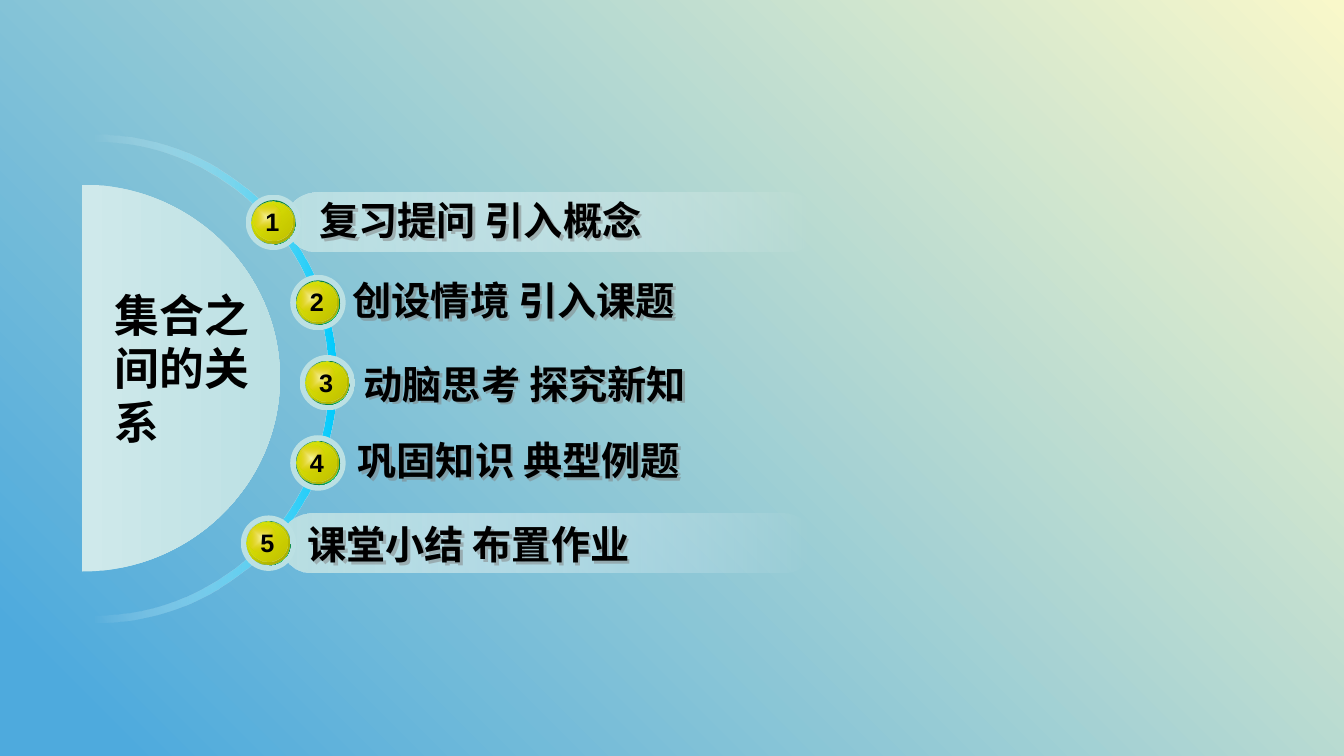
from dataclasses import dataclass

from lxml import etree
from pptx import Presentation
from pptx.dml.color import RGBColor
from pptx.enum.shapes import MSO_SHAPE
from pptx.enum.text import MSO_ANCHOR, PP_ALIGN
from pptx.oxml import parse_xml
from pptx.oxml.ns import nsdecls, qn
from pptx.util import Pt

OVAL, ROUND = MSO_SHAPE.OVAL, MSO_SHAPE.ROUNDED_RECTANGLE
LEFT, MID, RIGHT = PP_ALIGN.LEFT, PP_ALIGN.CENTER, PP_ALIGN.RIGHT
TOP = MSO_ANCHOR.TOP


@dataclass(frozen=True)
class Theme:
    font: str = "Arial"
    ink: str = "000000"
    shade: str = "808080"
    pale: str = "BBE0E3"
    mist: str = "CFE9EB"
    white: str = "FFFFFF"
    ring: str = "00CCFF"
    sky: tuple = ("4EAADD", "F9F8CA")
    rim: tuple = ("10E470", "098340")
    body: tuple = ("FFFF00", "A2A200")
    shine: tuple = ("FFFFFF", "E9940B")
    gloss: tuple = ("FFFF00", "C2C200")
    title: int = 32
    label: int = 28
    num: int = 18


T = Theme()

# Left of the ball, left and top of the label; the flag adds a bar behind it
STEPS = [
    ("复习提问 引入概念", 175.5, 221, 136.8, True),
    ("创设情境 引入课题", 207.3, 244.8, 193.7, False),
    ("动脑思考 探究新知", 214, 252.7, 253.6, False),
    ("巩固知识 典型例题", 207.3, 248.4, 308.2, False),
    ("课堂小结 布置作业", 172, 212.4, 368.4, True),
]
FIRST, PITCH, BALL = 139, 57.3, 39.6
BEND = 0.55  # handle length of a quarter ellipse


def blend(fill, pair, angle=0):
    fill.gradient()
    fill.gradient_angle = angle
    for stop, tone in zip(fill.gradient_stops, pair):
        stop.color.rgb = RGBColor.from_string(tone)


def paint(shape, pair, angle=0, alpha=(100, 100), focus=None):
    """Two-tone fill; focus = (path kind, left, top, right, bottom)."""
    shape.shadow.inherit = False
    shape.line.fill.background()
    blend(shape.fill, pair, angle)
    grad = shape.element.spPr.find(qn("a:gradFill"))
    for tone, part in zip(grad.iter(qn("a:srgbClr")), alpha):
        if part < 100:
            etree.SubElement(tone, qn("a:alpha"), val=str(part * 1000))
    if focus:
        kind, l, t, r, b = focus
        grad.replace(grad.find(qn("a:lin")), parse_xml(
            f'<a:path {nsdecls("a")} path="{kind}"><a:fillToRect l="{l}000" '
            f't="{t}000" r="{r}000" b="{b}000"/></a:path>'))


def write(slide, box, lines, size, wrap=False, shade=False):
    """Text box from (text, alignment) lines."""
    area = slide.shapes.add_textbox(*map(Pt, box))
    frame = area.text_frame
    frame.word_wrap = wrap
    frame.vertical_anchor = TOP
    for i, (text, align) in enumerate(lines):
        para = frame.add_paragraph() if i else frame.paragraphs[0]
        para.text = text
        para.alignment = align
        font = para.font
        font.name, font.size, font.bold = T.font, Pt(size), True
        font.color.rgb = RGBColor.from_string(T.ink)
    if shade:
        area.element.spPr.append(parse_xml(
            f'<a:effectLst {nsdecls("a")}><a:outerShdw dist="35921" '
            f'dir="2700000" algn="ctr"><a:srgbClr val="{T.shade}">'
            '<a:alpha val="50000"/></a:srgbClr></a:outerShdw></a:effectLst>'))


def arc(x, y, wide, high):
    """Ends and handles of a right half ellipse, from top to bottom."""
    bow, rise = wide * BEND, high * BEND
    return [(x, y - high), (x + bow, y - high), (x + wide, y - rise),
            (x + wide, y), (x + wide, y + rise), (x + bow, y + high),
            (x, y + high)]


def outline(slide, *arcs):
    """Closed shape of arcs, joined by straight sides."""
    points = [(Pt(x), Pt(y)) for part in arcs for x, y in part]
    pen = slide.shapes.build_freeform(*points[0])
    pen.add_line_segments(points[1:], close=True)
    shape = pen.convert_to_shape()
    # Turn each three handles and ends into one curve
    lines = list(shape.element.iter(qn("a:lnTo")))
    for n in range(len(arcs)):
        for k in (7 * n, 7 * n + 3):
            trio = lines[k:k + 3]
            bend = etree.Element(qn("a:cubicBezTo"))
            trio[0].addprevious(bend)
            for line in trio:
                bend.append(line[0])
                line.getparent().remove(line)
    return shape


def draw_hub(slide, x, y):
    """Half disc and ring about the point x, y, with the topic."""
    disc = outline(slide, arc(x, y, 141.4, 138.2))
    paint(disc, (T.mist, T.pale))
    outer = arc(x + 9.4, y + 0.4, 172.3, 174.5)
    inner = arc(x + 9.4, y + 0.4, 166.6, 169.2)
    ring = outline(slide, outer, inner[::-1])
    paint(ring, (T.white, T.ring), alpha=(2, 100))
    lines = [("集合之", RIGHT), ("间的关", RIGHT), ("系", LEFT)]
    write(slide, (x + 15.5, y - 68.4, 110.9, 123.8), lines, T.title)


def draw_ball(slide, x, y, num):
    """Numbered ball whose halo starts at x, y."""
    layers = [
        (0, 0, BALL, dict(pair=(T.pale, T.pale))),
        (4, 4, 31.6, dict(pair=T.rim, focus=("rect", 100, 100, 0, 0))),
        (4.4, 4.6, 30.2, dict(pair=T.body, angle=315, alpha=(85, 100))),
        (5.1, 6.4, 20.2, dict(pair=T.shine, alpha=(100, 0),
                              focus=("shape", 50, 50, 50, 50))),
        (5.8, 5.7, 27.4, dict(pair=T.gloss, angle=315, alpha=(0, 100))),
    ]
    for dx, dy, size, look in layers:
        disc = slide.shapes.add_shape(
            OVAL, Pt(x + dx), Pt(y + dy), Pt(size), Pt(size))
        paint(disc, **look)
    write(slide, (x + 6.8, y + 5, 24.5, 28.8), [(str(num), MID)], T.num)


def draw_bar(slide, x, y):
    bar = slide.shapes.add_shape(ROUND, Pt(x), Pt(y), Pt(380.2), Pt(41.8))
    bar.adjustments[0] = 0.5
    paint(bar, (T.pale, T.white), alpha=(100, 0))


def draw_steps(slide, top):
    for i, (text, x, left, high, barred) in enumerate(STEPS):
        y = top + i * PITCH
        if barred:
            draw_bar(slide, x + 28.8, y - 1.4)
        draw_ball(slide, x, y, i + 1)
        write(slide, (left, high, 293.8, 41), [(text, LEFT)], T.label,
              wrap=True, shade=True)


def main():
    deck = Presentation()
    deck.slide_width, deck.slide_height = Pt(960), Pt(540)
    slide = deck.slides.add_slide(deck.slide_layouts[6])
    # Background
    sky = slide.background.fill
    blend(sky, T.sky, 45)
    sky.gradient_stops[0].position = 0.06
    # Topic and steps
    draw_hub(slide, 58.6, 270)
    draw_steps(slide, FIRST)
    deck.save("out.pptx")


if __name__ == "__main__":
    main()
